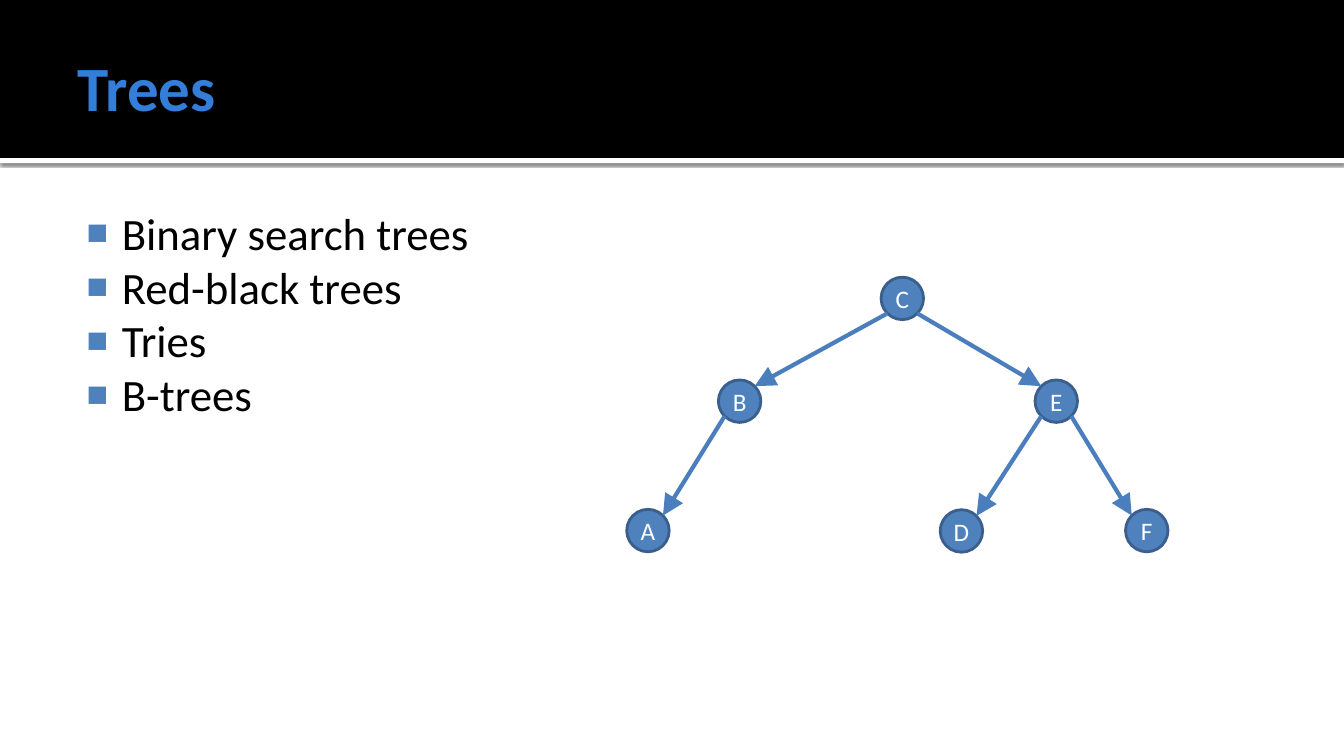
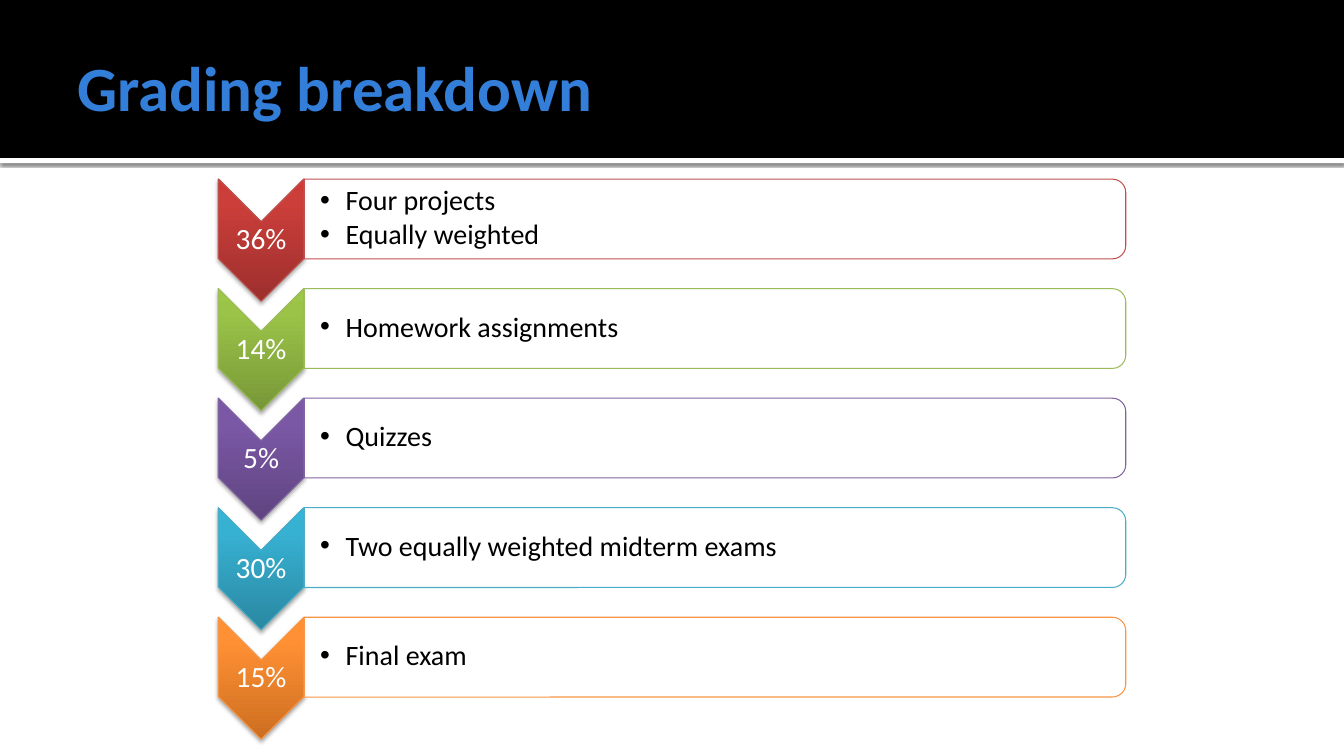
import lxml.etree
import pptx
import pptx.dml.color
import pptx.enum.shapes
import pptx.enum.text
import pptx.oxml.ns
import pptx.util

Cm = pptx.util.Cm
Pt = pptx.util.Pt
qn = pptx.oxml.ns.qn
SHAPE = pptx.enum.shapes.MSO_SHAPE
ALIGN = pptx.enum.text.PP_ALIGN
ANCHOR = pptx.enum.text.MSO_ANCHOR

BLACK, WHITE = "000000", "FFFFFF"
TITLE_BLUE, NODE_BLUE, NODE_EDGE, ARROW_BLUE = "337ED9", "4F81BD", "3A5F8C", "4B7EBC"


def color(value):
    return pptx.dml.color.RGBColor.from_string(value)


def add_xml(parent, tag, **attributes):
    return lxml.etree.SubElement(
        parent, qn(tag), {name: str(value) for name, value in attributes.items()})


class Deck:
    """Hold the shared style and the slide being built."""

    font = "Calibri"
    width, height = 33.87, 19.05
    band_height, strip_height = 3.98, 0.13
    title_layout, list_layout = 5, 1

    def __init__(self):
        self.presentation = pptx.Presentation()
        self.presentation.slide_width = Cm(self.width)
        self.presentation.slide_height = Cm(self.height)
        self.slide = None

    def add_slide(self, title, layout):
        slides = self.presentation.slides
        self.slide = slides.add_slide(self.presentation.slide_layouts[layout])
        if len(slides) == 1:
            self.add_master_bands()
        shape = self.slide.shapes.title
        self.place(shape, 1.7, 0.43, 30.48, 3.48)
        self.set_text(shape, [title], 45, TITLE_BLUE, ANCHOR.MIDDLE, ALIGN.LEFT,
                      (0.25, 0.13, 0.13, 0.13), bold=True)

    def add_master_bands(self):
        strip = self.add_shape(SHAPE.RECTANGLE, 0, self.band_height,
                               self.width, self.strip_height, WHITE)
        self.add_shadow(strip, 60, 2.5, 0.8)
        band = self.add_shape(SHAPE.RECTANGLE, 0, 0, self.width, self.band_height, BLACK)
        tree = self.presentation.slide_master.shapes.element
        for position, shape in enumerate((strip, band)):
            shape.element.nvSpPr.cNvPr.set("id", str(101 + position))
            tree.insert(2 + position, shape.element)

    def place(self, shape, left, top, width, height):
        shape.left, shape.top = Cm(left), Cm(top)
        shape.width, shape.height = Cm(width), Cm(height)

    def set_text(self, shape, lines, size, text_color, anchor, align, margins, bold=False):
        frame = shape.text_frame
        frame.text = "\n".join(lines)
        frame.word_wrap = True
        frame.auto_size = pptx.enum.text.MSO_AUTO_SIZE.NONE
        frame.vertical_anchor = anchor
        (frame.margin_left, frame.margin_top,
         frame.margin_right, frame.margin_bottom) = map(Cm, margins)
        for paragraph in frame.paragraphs:
            paragraph.alignment = align
            paragraph.space_before = Pt(0)
            for run in paragraph.runs:
                run.font.name = self.font
                run.font.size = Pt(size)
                run.font.bold = bold
                run.font.color.rgb = color(text_color)

    def add_bullets(self, shape, symbol, left, hanging, bullet_color, percent):
        for paragraph in shape.text_frame.paragraphs:
            properties = paragraph._p.get_or_add_pPr()
            properties.set("marL", str(Cm(left)))
            properties.set("indent", str(-Cm(hanging)))
            add_xml(add_xml(properties, "a:buClr"), "a:srgbClr", val=bullet_color)
            add_xml(properties, "a:buSzPct", val=percent * 1000)
            add_xml(properties, "a:buFont", typeface="Arial")
            add_xml(properties, "a:buChar", char=symbol)

    def add_list(self, lines):
        shape = self.slide.placeholders[1]
        self.place(shape, 1.7, 4.93, 30.48, 12.85)
        self.set_text(shape, lines, 32, BLACK, ANCHOR.TOP, ALIGN.LEFT,
                      (0.15, 0.25, 0.25, 0.13))
        self.add_bullets(shape, "■", 1.22, 0.89, NODE_BLUE, 80)

    def add_shape(self, kind, left, top, width, height, fill=None, line=None, line_width=0.75):
        shape = self.slide.shapes.add_shape(kind, Cm(left), Cm(top), Cm(width), Cm(height))
        shape.shadow.inherit = False
        if fill:
            shape.fill.solid()
            shape.fill.fore_color.rgb = color(fill)
        if line:
            shape.line.color.rgb = color(line)
            shape.line.width = Pt(line_width)
        else:
            shape.line.fill.background()
        return shape

    def add_turned_shape(self, kind, center_x, center_y, length, breadth, fill, line):
        shape = self.add_shape(kind, center_x - length / 2, center_y - breadth / 2,
                               length, breadth, fill, line)
        shape.rotation = 90
        return shape

    def add_shadow(self, shape, opacity, blur, distance):
        effects = shape.element.spPr.find(qn("a:effectLst"))
        shadow = add_xml(effects, "a:outerShdw", blurRad=Pt(blur), dist=Pt(distance),
                         dir=5400000, rotWithShape=0)
        add_xml(add_xml(shadow, "a:srgbClr", val=BLACK), "a:alpha", val=opacity * 1000)

    def add_gradient(self, shape, colors):
        shape.fill.gradient()
        shape.fill.gradient_angle = 90
        gradient = shape.element.spPr.find(qn("a:gradFill"))
        gradient.set("rotWithShape", "0")
        stops = gradient.find(qn("a:gsLst"))
        for stop in list(stops):
            stops.remove(stop)
        for percent, value in zip((0, 80, 100), colors):
            add_xml(add_xml(stops, "a:gs", pos=percent * 1000), "a:srgbClr", val=value)

    def add_text(self, lines, left, top, width, height, size, text_color, align, margins):
        shape = self.slide.shapes.add_textbox(Cm(left), Cm(top), Cm(width), Cm(height))
        self.set_text(shape, lines, size, text_color, ANCHOR.MIDDLE, align, margins)
        for paragraph in shape.text_frame.paragraphs:
            paragraph.line_spacing = 0.9
        return shape

    def add_node(self, letter, center, diameter):
        left, top = (value - diameter / 2 for value in center)
        shape = self.add_shape(SHAPE.OVAL, left, top, diameter, diameter,
                               NODE_BLUE, NODE_EDGE, 2)
        self.set_text(shape, [letter], 18, WHITE, ANCHOR.MIDDLE, ALIGN.CENTER, (0, 0, 0, 0))

    def add_branch(self, parent, child, diameter):
        corner = diameter / 2 * 0.5 ** 0.5
        side = corner if child[0] > parent[0] else -corner
        connector = self.slide.shapes.add_connector(
            pptx.enum.shapes.MSO_CONNECTOR.STRAIGHT,
            Cm(parent[0] + side), Cm(parent[1] + corner),
            Cm(child[0] - side), Cm(child[1] - corner))
        connector.line.color.rgb = color(ARROW_BLUE)
        connector.line.width = Pt(3)
        properties = connector.element.spPr
        add_xml(properties.find(qn("a:ln")), "a:tailEnd", type="triangle", w="lg", len="lg")
        add_xml(properties, "a:effectLst")

    def add_grade(self, row, percent, lines, accent, gradient):
        offset = row * 2.76
        chevron = self.add_turned_shape(SHAPE.CHEVRON, 6.58, 6.05 + offset,
                                        3.08, 2.16, None, accent)
        self.add_gradient(chevron, gradient)
        self.add_shadow(chevron, 35, 3.1, 1.8)
        self.add_text([percent], 5.5, 5.59 + offset, 2.16, 0.92, 21, WHITE,
                      ALIGN.CENTER, (0.03,) * 4)
        box = self.add_turned_shape(SHAPE.ROUND_2_SAME_RECTANGLE, 18.02, 5.52 + offset,
                                    2.01, 20.7, WHITE, accent)
        box_color = box.element.spPr.find(qn("a:solidFill")).find(qn("a:srgbClr"))
        add_xml(box_color, "a:alpha", val=90000)
        text = self.add_text(lines, 7.67, 4.6 + offset, 20.6, 1.81, 20, BLACK,
                             ALIGN.LEFT, (0.4, 0.03, 0.03, 0.03))
        for paragraph in text.text_frame.paragraphs:
            paragraph.space_after = Pt(3)
        self.add_bullets(text, "•", 0.64, 0.64, BLACK, 100)


def build_trees(deck):
    deck.add_slide("Trees", deck.list_layout)
    deck.add_list(["Binary search trees", "Red-black trees", "Tries", "B-trees"])
    diameter = 1.07
    nodes = {
        "A": (16.33, 13.37), "B": (18.64, 10.11), "C": (22.74, 7.52),
        "D": (24.23, 13.38), "E": (26.62, 10.11), "F": (28.9, 13.37),
    }
    for letter, center in nodes.items():
        deck.add_node(letter, center, diameter)
    for parent, child in ("CB", "BA", "CE", "ED", "EF"):
        deck.add_branch(nodes[parent], nodes[child], diameter)


def build_grading(deck):
    deck.add_slide("Grading breakdown", deck.title_layout)
    grades = [
        ("36%", ["Four projects", "Equally weighted"], "C0504D", ("9C2F2D", "CB3E3A", "CE3B37")),
        ("14%", ["Homework assignments"], "9BBB59", ("779737", "9BC348", "9DC746")),
        ("5%", ["Quizzes"], "8064A2", ("5F4480", "7B58A6", "7C57A8")),
        ("30%", ["Two equally weighted midterm exams"], "4BACC6", ("2A88A2", "37B1D2", "34B4D6")),
        ("15%", ["Final exam"], "F79646", ("CC6E20", "FF9034", "FF9136")),
    ]
    for row, grade in enumerate(grades):
        deck.add_grade(row, *grade)


def main():
    deck = Deck()
    build_trees(deck)
    build_grading(deck)
    deck.presentation.save("out.pptx")


if __name__ == "__main__":
    main()
